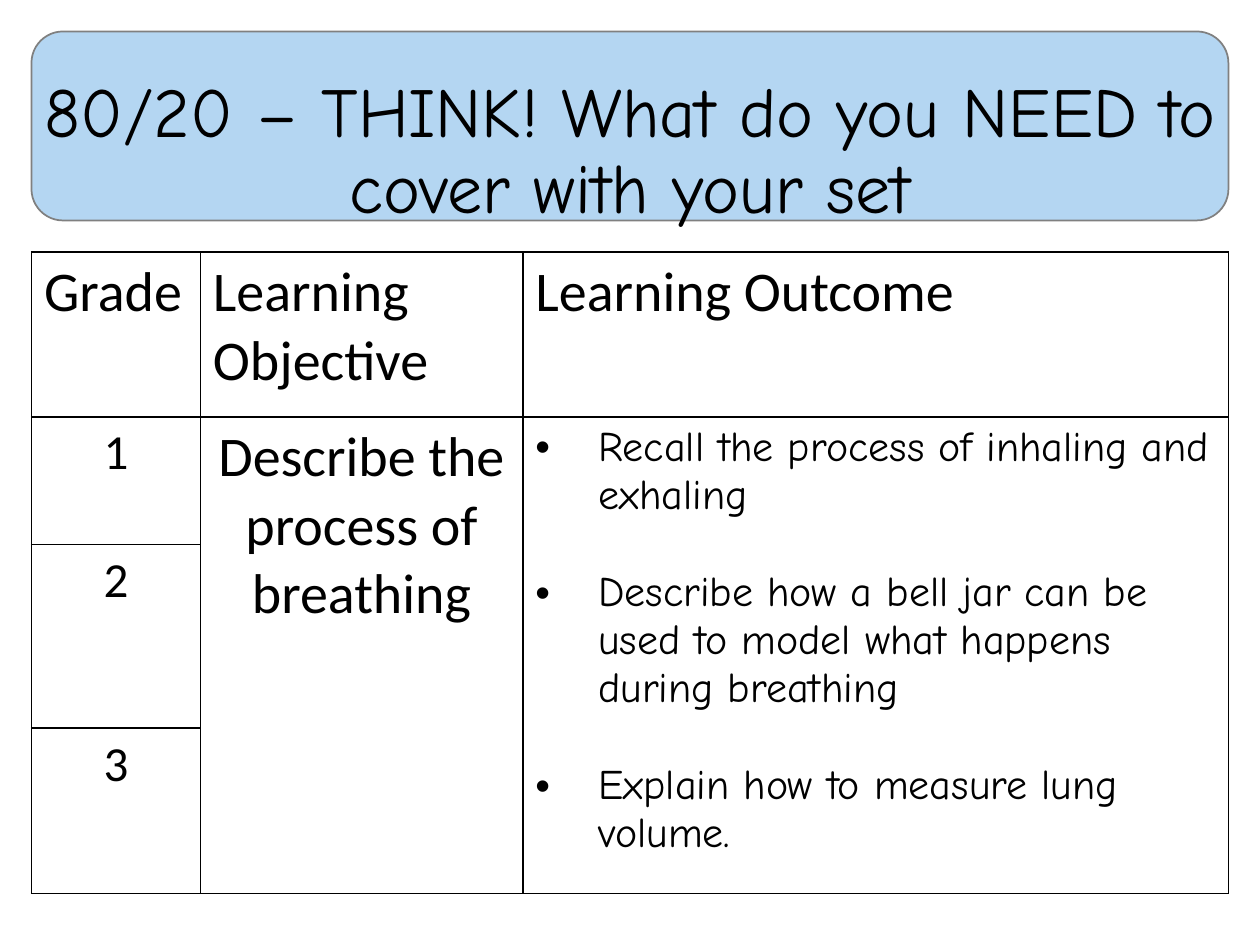
from dataclasses import dataclass

from lxml import etree
from pptx import Presentation
from pptx.dml.color import RGBColor
from pptx.enum import shapes, text
from pptx.oxml.ns import qn
from pptx.util import Inches, Pt


@dataclass(frozen=True)
class Theme:
    ink: str = "000000"
    paper: str = "FFFFFF"
    banner: str = "B4D6F2"
    outline: str = "808080"
    body_font: str = "Calibri"
    hand_font: str = "Comic Neue"
    title_size: int = 40
    heading_size: int = 32
    grade_size: int = 28
    outcome_size: int = 24
    outcome_gap: float = 27.7


THEME = Theme()
CENTER = text.PP_ALIGN.CENTER
TITLE = "80/20 – THINK! What do you NEED to cover with your set"
HEADINGS = ["Grade", "Learning Objective", "Learning Outcome"]
OBJECTIVE = "Describe the process of breathing"
OUTCOMES = [
    "Recall the process of inhaling and exhaling",
    "Describe how a bell jar can be used to model what happens during breathing",
    "Explain how to measure lung volume.",
]
COLUMN_WIDTHS = [1.34, 2.56, 5.6]
ROW_HEIGHTS = [1.31, 1.01, 1.46, 1.31]


def rgb(color):
    return RGBColor.from_string(color)


def write(frame, lines, size, font=THEME.body_font, align=text.PP_ALIGN.LEFT,
          line_spacing=None, gap=0, bullet=False):
    frame.word_wrap = True
    for index, line in enumerate(lines):
        paragraph = frame.paragraphs[0] if index == 0 else frame.add_paragraph()
        paragraph.alignment = align
        paragraph.line_spacing = line_spacing
        paragraph.space_before = Pt(gap if index else 0)
        run = paragraph.add_run()
        run.text = line
        run.font.name = font
        run.font.size = Pt(size)
        run.font.color.rgb = rgb(THEME.ink)
        if bullet:
            properties = paragraph._p.get_or_add_pPr()
            properties.set("marL", str(Inches(0.5)))
            properties.set("indent", str(Inches(-0.5)))
            etree.SubElement(properties, qn("a:buFont"), typeface="Arial")
            etree.SubElement(properties, qn("a:buChar"), char="•")


def style_cell(cell):
    properties = cell._tc.get_or_add_tcPr()
    for side in ("a:lnL", "a:lnR", "a:lnT", "a:lnB"):
        border = etree.SubElement(properties, qn(side), w=str(Pt(1)))
        fill = etree.SubElement(border, qn("a:solidFill"))
        etree.SubElement(fill, qn("a:srgbClr"), val=THEME.ink)
    cell.fill.solid()
    cell.fill.fore_color.rgb = rgb(THEME.paper)


def add_banner(slide, left, top, width, height):
    banner = slide.shapes.add_shape(
        shapes.MSO_SHAPE.ROUNDED_RECTANGLE, left, top, width, height)
    banner.shadow.inherit = False
    banner.fill.solid()
    banner.fill.fore_color.rgb = rgb(THEME.banner)
    banner.line.color.rgb = rgb(THEME.outline)
    banner.line.width = Pt(1)

    title = slide.shapes.add_textbox(left, top, width, height + Inches(0.11))
    title.text_frame.vertical_anchor = text.MSO_ANCHOR.BOTTOM
    write(title.text_frame, [TITLE], THEME.title_size, font=THEME.hand_font,
          align=CENTER, line_spacing=0.9)


def add_objectives(slide, left, top, width, height):
    table = slide.shapes.add_table(
        len(ROW_HEIGHTS), len(COLUMN_WIDTHS), left, top, width, height).table
    table.first_row = False
    table.horz_banding = False
    for column, column_width in zip(table.columns, COLUMN_WIDTHS):
        column.width = Inches(column_width)
    for row, row_height in zip(table.rows, ROW_HEIGHTS):
        row.height = Inches(row_height)
    for cell in table.iter_cells():
        style_cell(cell)

    last_row = len(ROW_HEIGHTS) - 1
    for column, heading in enumerate(HEADINGS):
        write(table.cell(0, column).text_frame, [heading], THEME.heading_size)
        if column:
            table.cell(1, column).merge(table.cell(last_row, column))
    for grade in range(1, last_row + 1):
        write(table.cell(grade, 0).text_frame, [str(grade)],
              THEME.grade_size, align=CENTER)
    write(table.cell(1, 1).text_frame, [OBJECTIVE], THEME.heading_size, align=CENTER)
    write(table.cell(1, 2).text_frame, OUTCOMES, THEME.outcome_size,
          font=THEME.hand_font, gap=THEME.outcome_gap, bullet=True)


def main():
    deck = Presentation()
    deck.slide_width, deck.slide_height = Inches(10), Inches(7.5)
    slide = deck.slides.add_slide(deck.slide_layouts[6])
    margin, content_width = Inches(0.25), Inches(9.5)
    add_banner(slide, margin, margin, content_width, Inches(1.5))
    add_objectives(slide, margin, Inches(2), content_width, Inches(sum(ROW_HEIGHTS)))
    deck.save("out.pptx")


if __name__ == "__main__":
    main()
